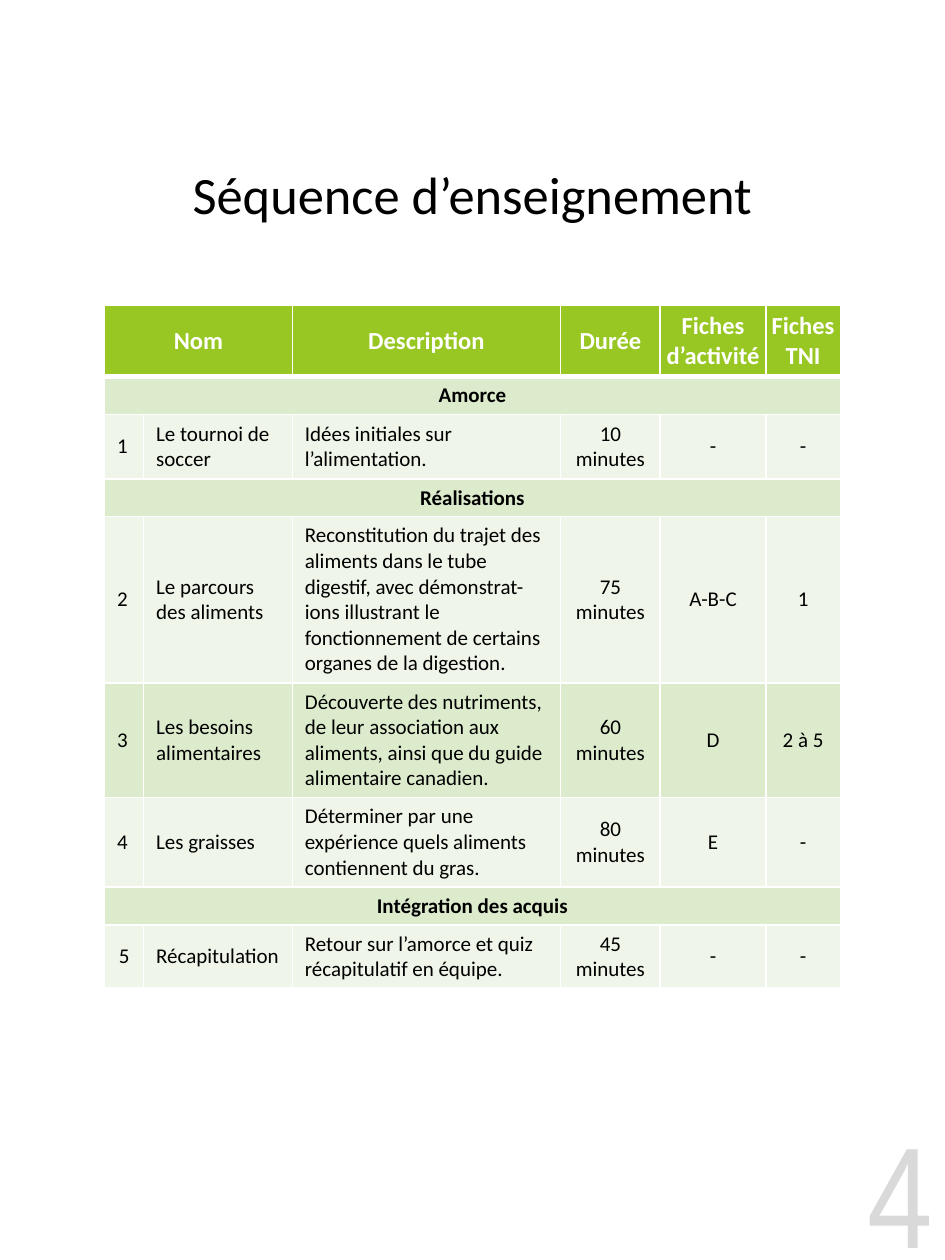
"""Build the teaching sequence page with its table of activities."""
from lxml.etree import SubElement
from pptx import Presentation
from pptx.dml.color import RGBColor
from pptx.enum.text import MSO_ANCHOR, PP_ALIGN
from pptx.oxml.ns import qn
from pptx.util import Inches, Pt

GREEN, MEDIUM, PALE = "98C723", "DDEBCD", "EFF5E8"
LEFT, CENTER, RIGHT = PP_ALIGN.LEFT, PP_ALIGN.CENTER, PP_ALIGN.RIGHT


def write(para, text, size, color, align, font="Calibri", bold=False):
    para.alignment = align
    span = para.add_run()
    span.text = text
    span.font.name = font
    span.font.size = Pt(size)
    span.font.bold = bold
    span.font.color.rgb = RGBColor.from_string(color)


def add_border(cell, side, width):
    line = SubElement(cell._tc.get_or_add_tcPr(), qn(f"a:{side}"), w=str(Pt(width)))
    fill = SubElement(line, qn("a:solidFill"))
    SubElement(fill, qn("a:srgbClr"), val="FFFFFF")


deck = Presentation()
deck.slide_width, deck.slide_height = Inches(7.5), Inches(10)
page = deck.slides.add_slide(deck.slide_layouts[6])

labels = [
    ("Séquence d’enseignement", 0, 0.66, 7.5, 1.76, 30, "000000", CENTER, "Calibri"),
    ("4", 6.28, 8.9, 1.22, 1.1, 82, "D9D9D9", RIGHT, "Arial Narrow"),
]
for text, left, top, width, height, size, color, align, font in labels:
    box = page.shapes.add_textbox(Inches(left), Inches(top), Inches(width), Inches(height))
    box.text_frame.word_wrap = True
    box.text_frame.vertical_anchor = MSO_ANCHOR.MIDDLE
    write(box.text_frame.paragraphs[0], text, size, color, align, font)

rows = [
    (GREEN, 0.57, ["Nom", "", "Description", "Durée", "Fiches d’activité", "Fiches TNI"]),
    (MEDIUM, 0.3, ["Amorce"]),
    (PALE, 0.51, ["1", "Le tournoi de soccer", "Idées initiales sur l’alimentation.",
                  "10 minutes", "-", "-"]),
    (MEDIUM, 0.3, ["Réalisations"]),
    (PALE, 1.32, ["2", "Le parcours des aliments",
                  "Reconstitution du trajet des aliments dans le tube digestif, avec "
                  "démonstrat-ions illustrant le fonctionnement de certains organes "
                  "de la digestion.", "75 minutes", "A-B-C", "1"]),
    (MEDIUM, 0.91, ["3", "Les besoins alimentaires",
                    "Découverte des nutriments, de leur association aux aliments, "
                    "ainsi que du guide alimentaire canadien.",
                    "60 minutes", "D", "2 à 5"]),
    (PALE, 0.71, ["4", "Les graisses",
                  "Déterminer par une expérience quels aliments contiennent du gras.",
                  "80\nminutes", "E", "-"]),
    (MEDIUM, 0.3, ["Intégration des acquis"]),
    (PALE, 0.5, ["5", "Récapitulation",
                 "Retour sur l’amorce et quiz récapitulatif en équipe.",
                 "45 minutes", "-", "-"]),
]
widths = [0.31, 1.18, 2.13, 0.79, 0.84, 0.59]
height = sum(row[1] for row in rows)
frame = page.shapes.add_table(len(rows), len(widths), Inches(0.83), Inches(2.42),
                              Inches(sum(widths)), Inches(height))
table = frame.table
for column, width in zip(table.columns, widths):
    column.width = Inches(width)

for r, (color, height, texts) in enumerate(rows):
    table.rows[r].height = Inches(height)
    header, section = r == 0, len(texts) == 1
    for c in range(len(widths)):
        cell = table.cell(r, c)
        for side in ("lnL", "lnR", "lnT", "lnB"):
            thick = (header and side == "lnB") or (r == 1 and side == "lnT")
            add_border(cell, side, 3 if thick else 1)
        cell.fill.solid()
        cell.fill.fore_color.rgb = RGBColor.from_string(color)
        cell.vertical_anchor = MSO_ANCHOR.MIDDLE
        if header and c > 2:
            cell.margin_left = cell.margin_right = Inches(0.04)
    if header:
        table.cell(r, 0).merge(table.cell(r, 1))
    if section:
        table.cell(r, 0).merge(table.cell(r, len(widths) - 1))
    for c, text in enumerate(texts):
        if not text:
            continue
        centered = header or section or c > 2 or text == "5"
        text_frame = table.cell(r, c).text_frame
        for i, part in enumerate(text.split("\n")):
            para = text_frame.add_paragraph() if i else text_frame.paragraphs[0]
            write(para, part, 14 if header else 12, "FFFFFF" if header else "000000",
                  CENTER if centered else LEFT, bold=header or section)

deck.save("out.pptx")
